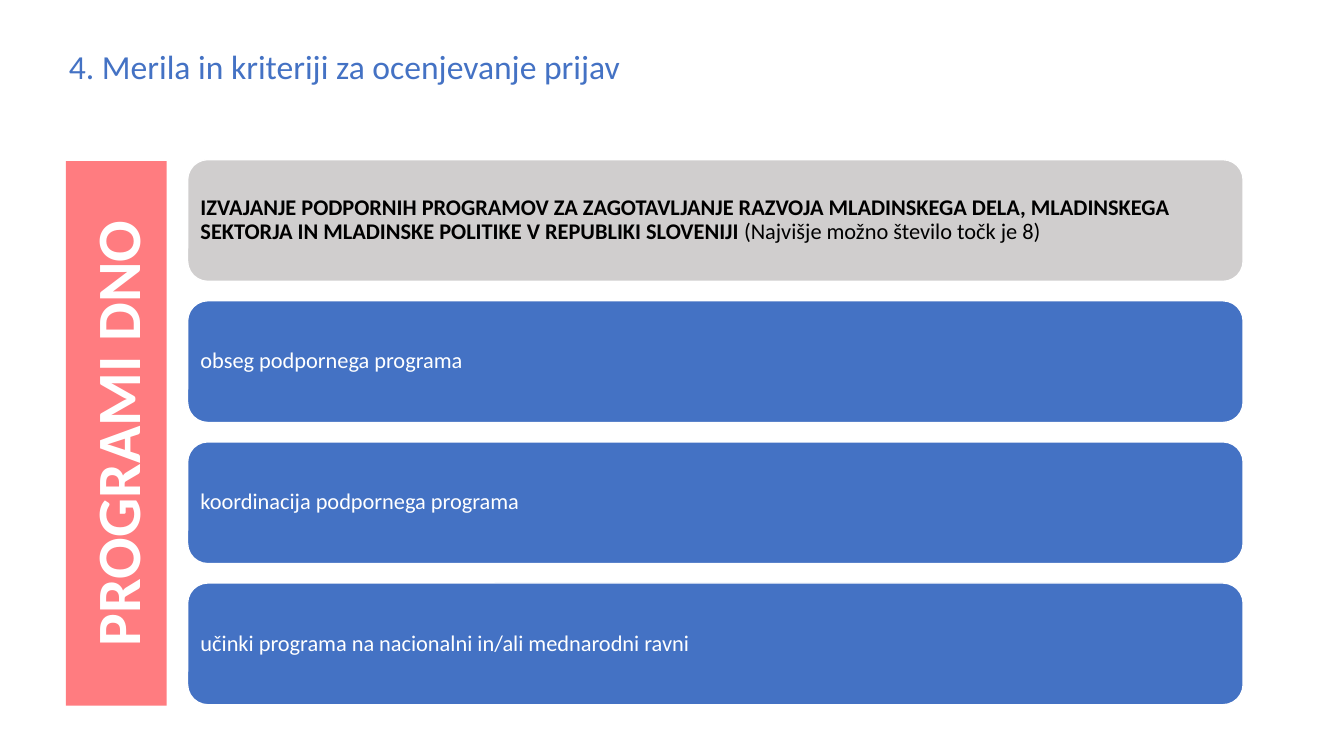
from pptx import Presentation
from pptx import util as u
from pptx.dml import color
from pptx.enum import shapes, text

FONT = "Calibri"
BLUE, GREY, CORAL, WHITE, BLACK = "4472C4", "D0CECE", "FF7C80", "FFFFFF", "000000"
CARD_LEFT, CARD_TOP, CARD_WIDTH, CARD_HEIGHT, CARD_PITCH = 134, 114, 754, 87, 100.8

HEADING = [
    ("IZVAJANJE PODPORNIH PROGRAMOV ZA ZAGOTAVLJANJE RAZVOJA MLADINSKEGA DELA, "
     "MLADINSKEGA SEKTORJA IN MLADINSKE POLITIKE V REPUBLIKI SLOVENIJI ", True),
    ("(Najvišje možno število točk je 8)", False),
]
CRITERIA = [
    "obseg podpornega programa",
    "koordinacija podpornega programa",
    "učinki programa na nacionalni in/ali mednarodni ravni",
]


def rgb(value):
    """Turn a hex string into a colour."""
    return color.RGBColor.from_string(value)


def write(frame, runs, size, ink, align=text.PP_ALIGN.LEFT):
    """Write (wording, bold) runs into the first paragraph of a frame."""
    paragraph = frame.paragraphs[0]
    paragraph.alignment = align
    for wording, bold in runs:
        run = paragraph.add_run()
        run.text = wording
        run.font.name = FONT
        run.font.size = u.Pt(size)
        run.font.bold = bold
        run.font.color.rgb = rgb(ink)
    return paragraph


def add_title(slide, wording):
    """Place and format the slide title."""
    title = slide.shapes.title
    title.left, title.top, title.width, title.height = map(u.Pt, (42, 29.5, 412, 36))
    frame = title.text_frame
    frame.word_wrap = False
    frame.auto_size = text.MSO_AUTO_SIZE.NONE
    frame.vertical_anchor = text.MSO_ANCHOR.TOP
    write(frame, [(wording, False)], 24, BLUE)


def add_block(slide, preset, box, fill):
    """Add a filled shape without outline or shadow."""
    block = slide.shapes.add_shape(preset, *map(u.Pt, box))
    block.shadow.inherit = False
    block.fill.solid()
    block.fill.fore_color.rgb = rgb(fill)
    block.line.fill.background()
    block.text_frame.word_wrap = True
    block.text_frame.vertical_anchor = text.MSO_ANCHOR.MIDDLE
    return block


def add_card(slide, row, runs, fill, ink):
    """Add the rounded card of one row with its text."""
    box = (CARD_LEFT, CARD_TOP + row * CARD_PITCH, CARD_WIDTH, CARD_HEIGHT)
    card = add_block(slide, shapes.MSO_SHAPE.ROUNDED_RECTANGLE, box, fill)
    card.line.color.rgb = rgb(WHITE)
    card.line.width = u.Pt(1)
    frame = card.text_frame
    frame.margin_left = frame.margin_right = u.Pt(5)
    frame.margin_top = frame.margin_bottom = u.Pt(5)
    write(frame, runs, 16, ink).line_spacing = 0.9


def add_banner(slide, wording):
    """Add the side banner whose text reads upwards."""
    banner = add_block(slide, shapes.MSO_SHAPE.RECTANGLE, (47, 115, 72, 389), CORAL)
    banner.text_frame._txBody.bodyPr.set("vert", "vert270")
    write(banner.text_frame, [(wording, True)], 44, WHITE, text.PP_ALIGN.CENTER)


def main():
    """Build and save the slide."""
    deck = Presentation()
    deck.slide_width, deck.slide_height = u.Pt(960), u.Pt(540)
    slide = deck.slides.add_slide(deck.slide_layouts[5])
    add_title(slide, "4. Merila in kriteriji za ocenjevanje prijav")
    add_card(slide, 0, HEADING, GREY, BLACK)
    for row, criterion in enumerate(CRITERIA, start=1):
        add_card(slide, row, [(criterion, False)], BLUE, WHITE)
    add_banner(slide, "PROGRAMI DNO")
    deck.save("out.pptx")


if __name__ == "__main__":
    main()
